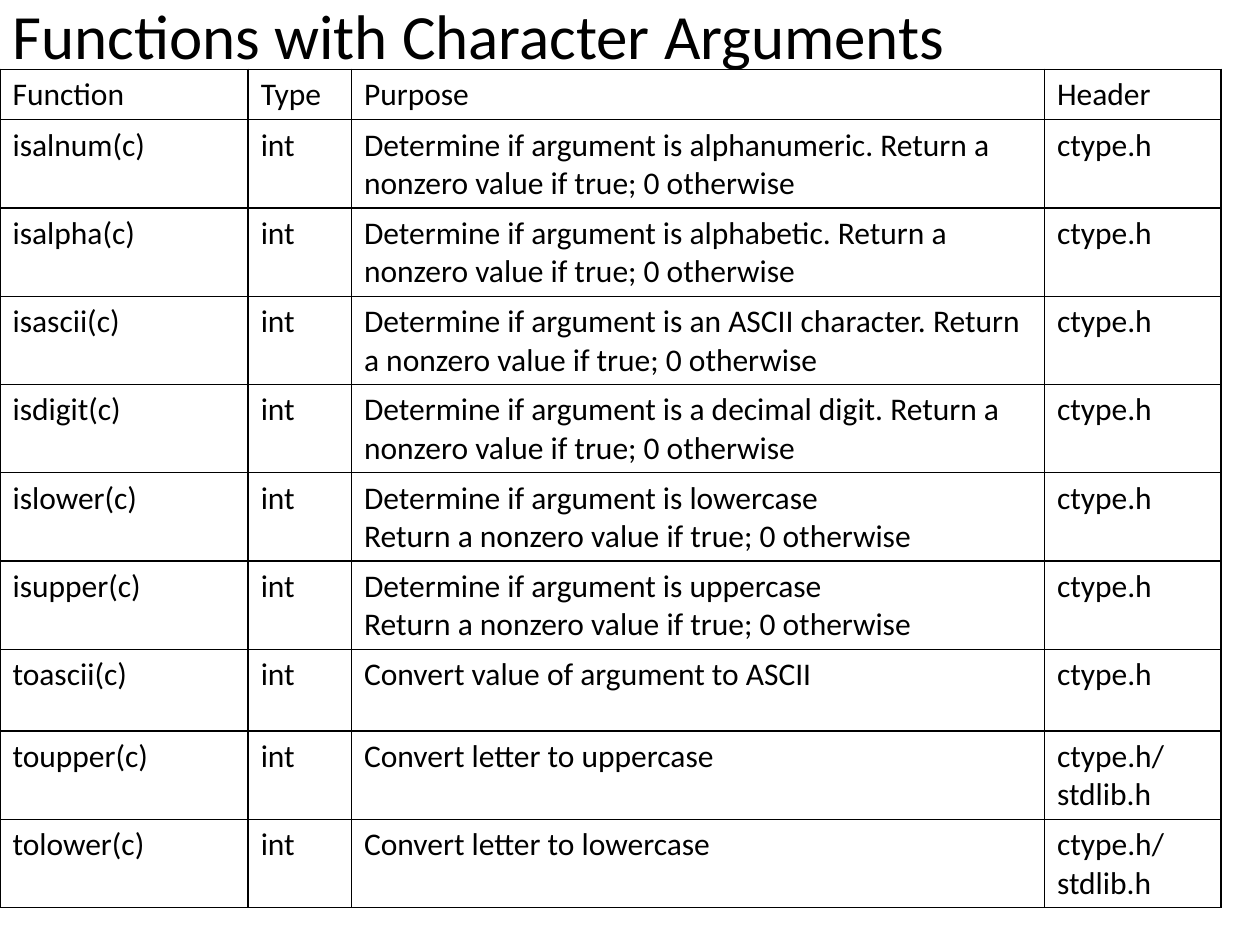
from lxml.etree import SubElement
from pptx import Presentation
from pptx.dml.color import RGBColor
from pptx.enum.text import MSO_ANCHOR as Anchor
from pptx.oxml.ns import qn
from pptx.util import Pt

# Content
TITLE = "Functions with Character Arguments"
HEADINGS = ("Function", "Type", "Purpose", "Header")
TEST = "Return a nonzero value if true; 0 otherwise"
BOTH_HEADERS = "ctype.h/ stdlib.h"
FUNCTIONS = [
    ("isalnum(c)", f"Determine if argument is alphanumeric. {TEST}", "ctype.h"),
    ("isalpha(c)", f"Determine if argument is alphabetic. {TEST}", "ctype.h"),
    ("isascii(c)", f"Determine if argument is an ASCII character. {TEST}", "ctype.h"),
    ("isdigit(c)", f"Determine if argument is a decimal digit. {TEST}", "ctype.h"),
    ("islower(c)", f"Determine if argument is lowercase\n{TEST}", "ctype.h"),
    ("isupper(c)", f"Determine if argument is uppercase\n{TEST}", "ctype.h"),
    ("toascii(c)", "Convert value of argument to ASCII", "ctype.h"),
    ("toupper(c)", "Convert letter to uppercase", BOTH_HEADERS),
    ("tolower(c)", "Convert letter to lowercase", BOTH_HEADERS),
]
ROWS = [HEADINGS] + [(name, "int", purpose, header)
                     for name, purpose, header in FUNCTIONS]

# Layout, in points
TABLE_TOP = 39.6
COLUMN_WIDTHS = (141.84, 59.04, 396, 100.8)
HEADING_HEIGHT, ROW_HEIGHT = 28.08, 46.8
ROW_HEIGHTS = [HEADING_HEIGHT] + [ROW_HEIGHT] * len(FUNCTIONS)
BLACK = "000000"


def color(value):
    return RGBColor.from_string(value)


def write(frame, text, size):
    frame.text = text
    for para in frame.paragraphs:
        para.font.name = "Calibri"
        para.font.size = Pt(size)
        para.font.color.rgb = color(BLACK)


def add_borders(cell):
    properties = cell._tc.get_or_add_tcPr()
    for side in ("lnL", "lnR", "lnT", "lnB"):
        line = SubElement(properties, qn(f"a:{side}"), w=str(Pt(1)))
        fill = SubElement(line, qn("a:solidFill"))
        SubElement(fill, qn("a:srgbClr"), val=BLACK)


deck = Presentation()
deck.slide_width, deck.slide_height = Pt(720), Pt(540)
page = deck.slides.add_slide(deck.slide_layouts[6])

# Title
box = page.shapes.add_textbox(0, 0, Pt(648), Pt(TABLE_TOP))
box.text_frame.word_wrap = True
box.text_frame.vertical_anchor = Anchor.MIDDLE
write(box.text_frame, TITLE, 36)

# Function table
table = page.shapes.add_table(
    len(ROWS), len(HEADINGS), 0, Pt(TABLE_TOP),
    Pt(sum(COLUMN_WIDTHS)), Pt(sum(ROW_HEIGHTS))).table
table.first_row = table.horz_banding = False
for column, width in zip(table.columns, COLUMN_WIDTHS):
    column.width = Pt(width)
for row, height, texts in zip(table.rows, ROW_HEIGHTS, ROWS):
    row.height = Pt(height)
    for cell, text in zip(row.cells, texts):
        write(cell.text_frame, text, 18)
        add_borders(cell)
        cell.fill.background()

deck.save("out.pptx")
